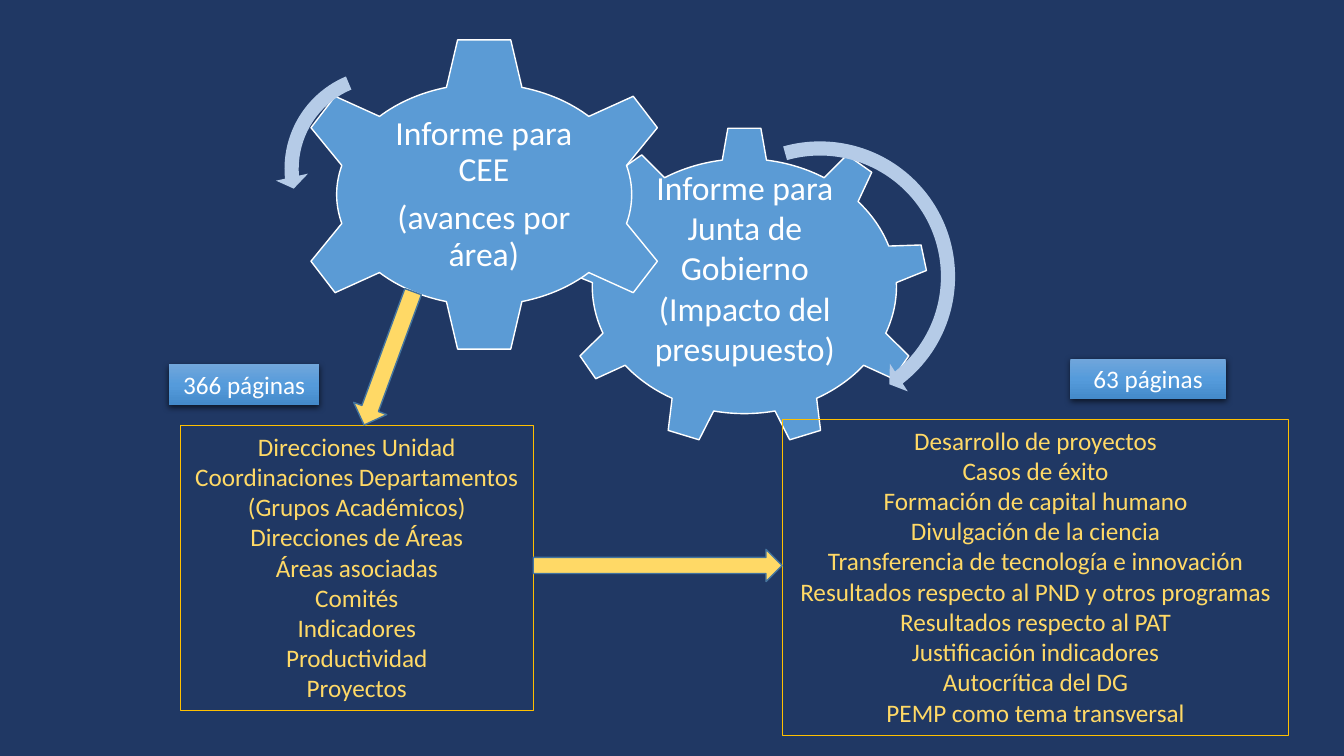
from copy import deepcopy

from lxml import etree
from pptx import Presentation
from pptx.dml.color import RGBColor
from pptx.enum.shapes import MSO_SHAPE
from pptx.enum.text import MSO_ANCHOR, PP_ALIGN
from pptx.oxml.ns import qn
from pptx.util import Pt

RECTANGLE = MSO_SHAPE.RECTANGLE
GEAR_6, GEAR_9 = MSO_SHAPE.GEAR_6, MSO_SHAPE.GEAR_9
CIRCULAR, LEFT_CIRCULAR = MSO_SHAPE.CIRCULAR_ARROW, MSO_SHAPE.LEFT_CIRCULAR_ARROW
DOWN_ARROW, RIGHT_ARROW = MSO_SHAPE.DOWN_ARROW, MSO_SHAPE.RIGHT_ARROW
CENTER = PP_ALIGN.CENTER
TOP, MIDDLE = MSO_ANCHOR.TOP, MSO_ANCHOR.MIDDLE

NAVY, BLUE, PALE_BLUE, WHITE = "203864", "5B9BD5", "B5CBE7", "FFFFFF"
GOLD, YELLOW, ARROW_EDGE = "FFC000", "FFD966", "43739E"
LABEL_STOPS = [(0, "71A6DB"), (0.5, "559BDB"), (1, "448ACA")]


def color(hex_string):
    return RGBColor.from_string(hex_string)


class SlideBuilder:
    font = "Calibri"

    def __init__(self, page):
        self.page = page
        page.background.fill.solid()
        page.background.fill.fore_color.rgb = color(NAVY)

    def shape(self, kind, left, top, width, height, fill=None, line=None,
              line_width=1, rotation=0, adjustments=()):
        shape = self.page.shapes.add_shape(
            kind, Pt(left), Pt(top), Pt(width), Pt(height))
        shape.shadow.inherit = False
        shape.rotation = rotation
        if fill:
            shape.fill.solid()
            shape.fill.fore_color.rgb = color(fill)
        else:
            shape.fill.background()
        if line:
            shape.line.color.rgb = color(line)
            shape.line.width = Pt(line_width)
        else:
            shape.line.fill.background()
        for index, value in enumerate(adjustments):
            shape.adjustments[index] = value
        return shape

    def set_text(self, box, lines, size, text_color, anchor=TOP):
        frame = box.text_frame
        frame.word_wrap = True
        frame.vertical_anchor = anchor
        frame.text = "\n".join(lines)
        for para in frame.paragraphs:
            para.alignment = CENTER
            for span in para.runs:
                span.font.name = self.font
                span.font.size = Pt(size)
                span.font.color.rgb = color(text_color)
        return frame

    def gear_text(self, left, top, width, height, lines, spacing=1, after=0):
        box = self.page.shapes.add_textbox(
            Pt(left), Pt(top), Pt(width), Pt(height))
        frame = self.set_text(box, lines, 24, WHITE, MIDDLE)
        frame.margin_left = frame.margin_right = Pt(2)
        frame.margin_top = frame.margin_bottom = Pt(2)
        for para in frame.paragraphs:
            para.line_spacing = spacing
            para.space_after = Pt(after)

    def list_box(self, left, top, width, height, lines):
        box = self.shape(RECTANGLE, left, top, width, height,
                         line=GOLD, line_width=0.75)
        self.set_text(box, lines, 18, YELLOW)

    def page_label(self, left, top, width, text):
        box = self.shape(RECTANGLE, left, top, width, 29.1)
        self.set_text(box, [text], 18, WHITE)
        # Three-stop vertical gradient
        box.fill.gradient()
        box.fill.gradient_angle = 270
        properties = box._element.spPr
        stop_list = properties.find(".//" + qn("a:gsLst"))
        stop_list.insert(1, deepcopy(stop_list[0]))
        for stop, (position, tint) in zip(box.fill.gradient_stops, LABEL_STOPS):
            stop.position = position
            stop.color.rgb = color(tint)
        # Soft shadow below
        effects = properties.find(qn("a:effectLst"))
        shadow = etree.SubElement(
            effects, qn("a:outerShdw"), blurRad=str(Pt(4.5)), dist=str(Pt(1.5)),
            dir="5400000", algn="ctr", rotWithShape="0")
        black = etree.SubElement(shadow, qn("a:srgbClr"), val="000000")
        etree.SubElement(black, qn("a:alpha"), val="63000")


def main():
    deck = Presentation()
    deck.slide_width, deck.slide_height = Pt(960), Pt(540)
    slide = SlideBuilder(deck.slides.add_slide(deck.slide_layouts[6]))

    # Gears
    slide.shape(GEAR_9, 400.3, 90.7, 262.8, 227.5, BLUE, WHITE)
    slide.gear_text(450.7, 115, 162.7, 152,
                    ["Informe para Junta de Gobierno", "(Impacto del presupuesto)"])
    slide.shape(GEAR_6, 206.6, 25.9, 278.6, 226.1, BLUE, WHITE)
    slide.gear_text(270.7, 83.5, 149.8, 111.6,
                    ["Informe para CEE", "(avances por área)"], 0.9, 8.4)

    # Turning arrows
    slide.shape(CIRCULAR, 482.4, 94.3, 206.6, 206.6, PALE_BLUE,
                adjustments=(0.049, 3.126, 31.185, 152.545, 0.057))
    slide.shape(LEFT_CIRCULAR, 196.6, 42.5, 156.2, 156.2, PALE_BLUE,
                adjustments=(0.065, 4.3, 104.891, 148.378, 0.075))

    # Contents of each report
    slide.list_box(128.9, 304.2, 252, 203.6, [
        "Direcciones Unidad",
        "Coordinaciones Departamentos (Grupos Académicos)",
        "Direcciones de Áreas",
        "Áreas asociadas",
        "Comités",
        "Indicadores",
        "Productividad",
        "Proyectos",
    ])
    slide.list_box(558.7, 299.9, 362, 225.5, [
        "Desarrollo de proyectos",
        "Casos de éxito",
        "Formación de capital humano",
        "Divulgación de la ciencia",
        "Transferencia de tecnología e innovación",
        "Resultados respecto al PND y otros programas",
        "Resultados respecto al PAT",
        "Justificación indicadores",
        "Autocrítica del DG",
        "PEMP como tema transversal",
    ])

    # Flow arrows
    slide.shape(DOWN_ARROW, 265, 205.2, 25.2, 101.5, YELLOW, ARROW_EDGE, rotation=20.2)
    slide.shape(RIGHT_ARROW, 380.9, 392.4, 177.8, 23, YELLOW, ARROW_EDGE)

    # Page counts
    slide.page_label(120.8, 260.2, 107.2, "366 páginas")
    slide.page_label(764.6, 256.1, 111, "63 páginas")

    deck.save("out.pptx")


if __name__ == "__main__":
    main()
